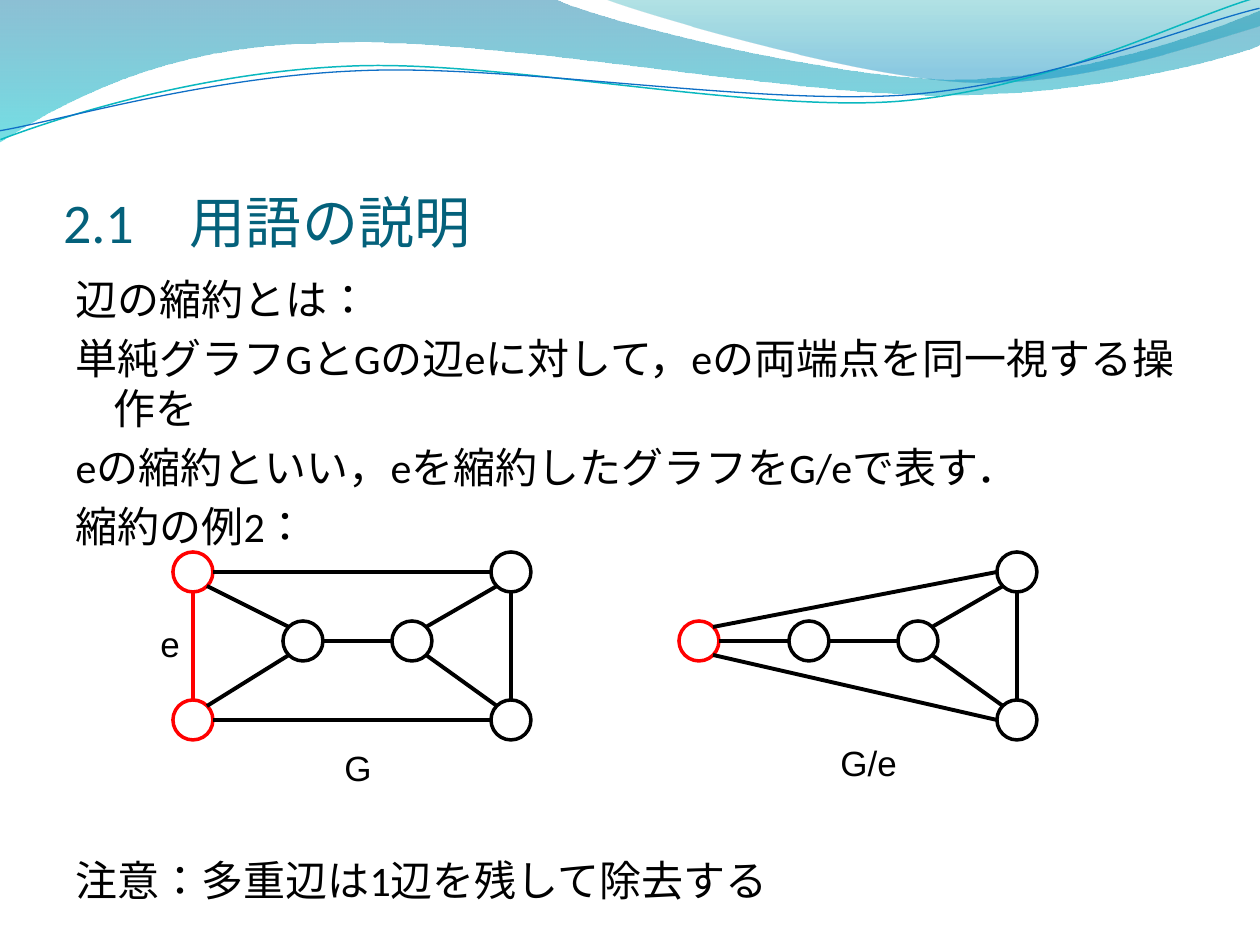
from lxml.etree import SubElement
from pptx import Presentation
from pptx.dml.color import RGBColor
from pptx.enum.lang import MSO_LANGUAGE_ID
from pptx.enum.shapes import MSO_CONNECTOR, MSO_SHAPE
from pptx.enum.text import MSO_ANCHOR, MSO_AUTO_SIZE, PP_ALIGN
from pptx.oxml.ns import qn
from pptx.util import Pt

EMU_PER_PX = 914400 / 126
BLACK, RED, TEAL = "000000", "FF0000", "04617B"

NODE_SIZE = 40
DIAGONAL = 14
SITES = {
    "N": (0, -20), "S": (0, 20), "W": (-20, 0), "E": (20, 0),
    "NW": (-DIAGONAL, -DIAGONAL), "NE": (DIAGONAL, -DIAGONAL),
    "SW": (-DIAGONAL, DIAGONAL), "SE": (DIAGONAL, DIAGONAL),
}

# Both graphs share these four nodes and their edges.
CORE_NODES = {
    "inner left": (303, 641, BLACK), "inner right": (412, 641, BLACK),
    "top": (511, 572, BLACK), "bottom": (511, 720, BLACK),
}
CORE_EDGES = [
    ("inner left", "E", "inner right", "W", BLACK),
    ("inner right", "NE", "top", "SW", BLACK),
    ("inner right", "SE", "bottom", "NW", BLACK),
    ("top", "S", "bottom", "N", BLACK),
]
G_NODES = {"e top": (193, 572, RED), "e bottom": (193, 720, RED)}
G_EDGES = [
    ("e top", "E", "top", "W", BLACK),
    ("e bottom", "E", "bottom", "W", BLACK),
    ("e top", "SE", "inner left", "NW", BLACK),
    ("e bottom", "NE", "inner left", "SW", BLACK),
    ("e top", "S", "e bottom", "N", RED),
]
CONTRACTED_SHIFT = 506
CONTRACTED_NODES = {"merged": (193, 641, RED)}
CONTRACTED_EDGES = [
    ("merged", "NE", "top", "W", BLACK),
    ("merged", "E", "inner left", "W", BLACK),
    ("merged", "SE", "bottom", "W", BLACK),
]

# An outline is a start point, then line steps (1 point) or curve steps (3 points).
LEFT_WAVE = [
    (0, -1), [(554, -1)],
    [(600, 21), (837, 79), (955, 79)], [(1075, 79), (1207, 33), (1260, 11)],
    [(1261, 45)],
    [(1239, 55), (1096, 96), (940, 95)], [(784, 95), (481, 35), (324, 43)],
    [(163, 44), (58, 105), (-1, 142)],
]
RIGHT_WAVE = [
    (604, -1), [(641, 14), (859, 78), (969, 82)],
    [(1079, 87), (1211, 40), (1260, 26)], [(1260, 0)],
]
CURVE_TILT = -2.7
TEAL_CURVE = [
    (-2, 110), [(59, 90), (200, 52), (350, 53)],
    [(499, 53), (745, 118), (896, 114)], [(1049, 109), (1184, 45), (1260, 27)],
]
BLUE_CURVE = [
    (-2, 101), [(57, 94), (207, 57), (358, 58)],
    [(509, 58), (751, 111), (902, 108)], [(1052, 104), (1187, 52), (1262, 38)],
]

BODY_LINES = [
    "辺の縮約とは：",
    "単純グラフGとGの辺eに対して，eの両端点を同一視する操作を",
    "eの縮約といい，eを縮約したグラフをG/eで表す．",
    "縮約の例2：",
    "注意：多重辺は1辺を残して除去する",
]


def px(value):
    return round(value * EMU_PER_PX)


def color(hex_text):
    return RGBColor.from_string(hex_text)


class Page:
    heading_font = "Calibri"
    label_font = "Arial"

    def __init__(self, deck):
        self.slide = deck.slides.add_slide(deck.slide_layouts[1])
        self.shapes = self.slide.shapes

    def place(self, box, left, top, width, height):
        box.left, box.top, box.width, box.height = map(px, (left, top, width, height))

    def style(self, para, font, size, hex_text):
        para.font.name = font
        para.font.size = Pt(size)
        para.font.color.rgb = color(hex_text)
        for span in para.runs:
            span.font.language_id = MSO_LANGUAGE_ID.JAPANESE

    def title(self, text, *area):
        box = self.shapes.title
        self.place(box, *area)
        frame = box.text_frame
        frame.text = text
        frame.auto_size = MSO_AUTO_SIZE.NONE
        frame.vertical_anchor = MSO_ANCHOR.BOTTOM
        frame.margin_left = frame.margin_right = frame.margin_bottom = 0
        para = frame.paragraphs[0]
        para.alignment = PP_ALIGN.LEFT
        self.style(para, self.heading_font, 32, TEAL)

    def body(self, lines, *area):
        box = self.slide.placeholders[1]
        self.place(box, *area)
        frame = box.text_frame
        frame.text = "\n".join(lines)
        frame.auto_size = MSO_AUTO_SIZE.NONE
        for para in frame.paragraphs:
            self.style(para, self.heading_font, 24, BLACK)
            properties = para._p.get_or_add_pPr()
            properties.set("marL", str(px(38)))
            properties.set("indent", str(px(-38)))
            properties.insert_element_before(
                properties.makeelement(qn("a:buNone")), "a:tabLst", "a:defRPr")
        frame.paragraphs[-1].space_before = Pt(174)

    def label(self, text, *area):
        box = self.shapes.add_textbox(*map(px, area))
        box.text_frame.word_wrap = False
        para = box.text_frame.paragraphs[0]
        para.text = text
        self.style(para, self.label_font, 20, BLACK)

    def freeform(self, outline, close):
        """Build an outline, merging the points of each curve step into one Bézier."""
        start, *steps = outline
        builder = self.shapes.build_freeform(*map(px, start))
        points = [(px(x), px(y)) for step in steps for x, y in step]
        builder.add_line_segments(points, close=close)
        shape = builder.convert_to_shape()
        shape.shadow.inherit = False
        segments = iter(list(shape._element.iter(qn("a:lnTo"))))
        for step in steps:
            group = [next(segments) for _ in step]
            if len(group) == 3:
                bezier = group[0].makeelement(qn("a:cubicBezTo"))
                group[0].addprevious(bezier)
                for segment in group:
                    bezier.append(segment[0])
                    segment.getparent().remove(segment)
        return shape

    def wave(self, outline, stops):
        """Draw a filled wave; each stop is position, colour and opacity in percent."""
        shape = self.freeform(outline, close=True)
        shape.line.fill.background()
        shape.fill.gradient()
        shape.fill.gradient_angle = 270
        for stop, (position, hex_text, _) in zip(shape.fill.gradient_stops, stops):
            stop.position = position / 100
            stop.color.rgb = color(hex_text)
        for element, (_, _, opacity) in zip(shape._element.iter(qn("a:srgbClr")), stops):
            SubElement(element, qn("a:alpha"), val=str(opacity * 1000))

    def curve(self, outline, hex_text, width):
        shape = self.freeform(outline, close=False)
        shape.rotation = CURVE_TILT
        shape.fill.background()
        shape.line.color.rgb = color(hex_text)
        shape.line.width = Pt(width)

    def node(self, x, y, hex_text):
        corner = (x - NODE_SIZE // 2, y - NODE_SIZE // 2)
        circle = self.shapes.add_shape(
            MSO_SHAPE.OVAL, *map(px, (*corner, NODE_SIZE, NODE_SIZE)))
        circle.shadow.inherit = False
        circle.fill.background()
        circle.line.color.rgb = color(hex_text)
        circle.line.width = Pt(2)

    def edge(self, start, end, hex_text):
        line = self.shapes.add_connector(MSO_CONNECTOR.STRAIGHT, *map(px, (*start, *end)))
        line.line.color.rgb = color(hex_text)
        line.line.width = Pt(2.25)
        SubElement(line._element.spPr, qn("a:effectLst"))

    def graph(self, nodes, edges, shift=0):
        """Draw the core graph with extra nodes and edges, moved right by shift."""
        nodes = {name: (x + shift, y, hue) for name, (x, y, hue) in (CORE_NODES | nodes).items()}
        for node in nodes.values():
            self.node(*node)
        for first, first_site, second, second_site, hue in CORE_EDGES + edges:
            ends = [(nodes[name][0] + SITES[site][0], nodes[name][1] + SITES[site][1])
                    for name, site in ((first, first_site), (second, second_site))]
            self.edge(*ends, hue)


def main():
    deck = Presentation()
    deck.slide_width, deck.slide_height = px(1260), px(945)
    page = Page(deck)
    page.wave(LEFT_WAVE, [(0, "0074A1", 45), (100, "00C6CF", 55)])
    page.wave(RIGHT_WAVE, [(0, "00A1A9", 30), (80, "008BBF", 45)])
    page.curve(TEAL_CURVE, "0AB8BF", 0.85)
    page.curve(BLUE_CURVE, "0F6FC6", 0.75)
    page.title("2.1　用語の説明", 63, 97, 1134, 158)
    page.body(BODY_LINES, 63, 267, 1134, 605)
    page.graph(G_NODES, G_EDGES)
    page.graph(CONTRACTED_NODES, CONTRACTED_EDGES, CONTRACTED_SHIFT)
    page.label("G", 332, 740, 53, 55)
    page.label("G/e", 828, 735, 82, 55)
    page.label("e", 148, 616, 45, 55)
    deck.save("out.pptx")


if __name__ == "__main__":
    main()
